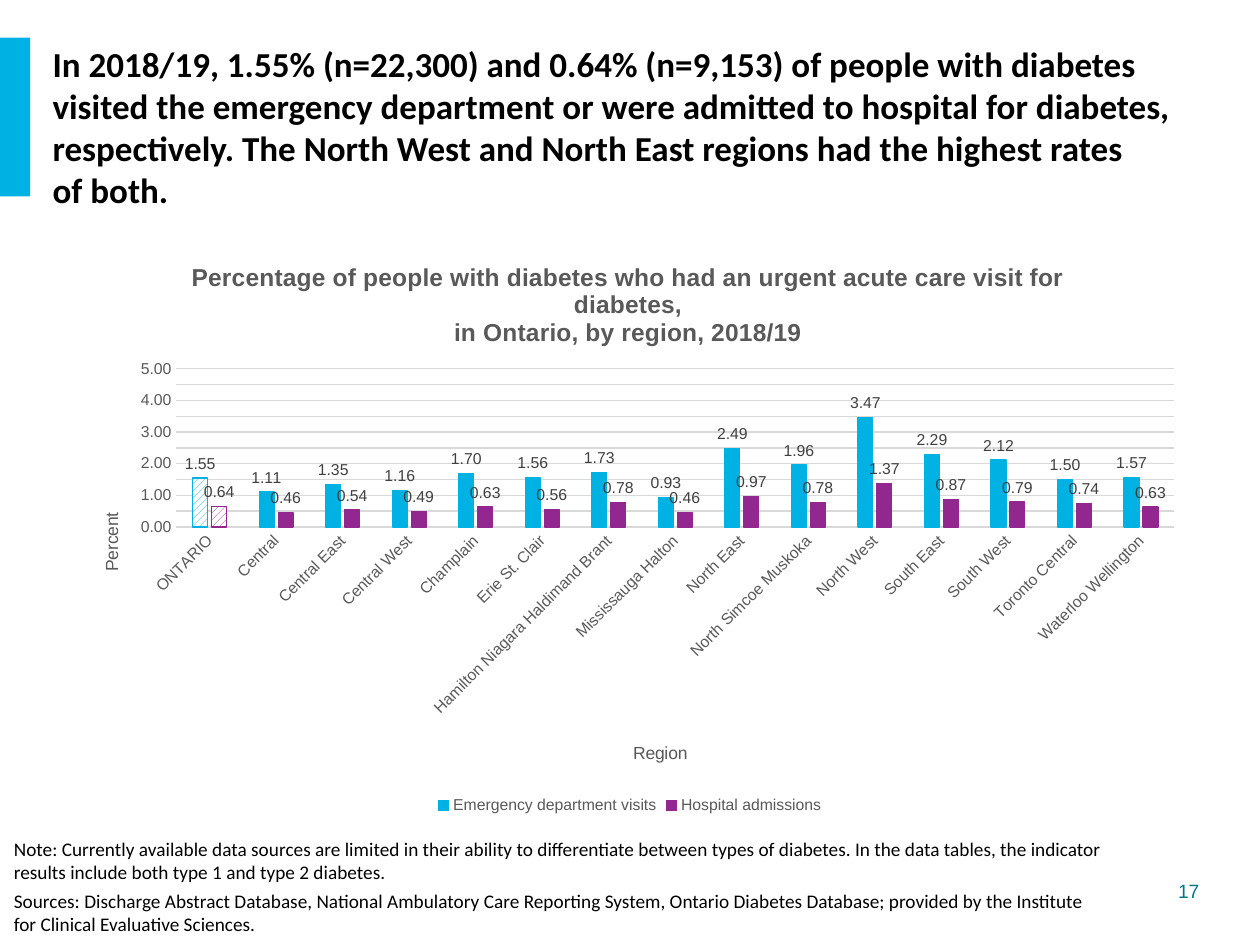
from copy import deepcopy

from lxml import etree
from pptx import Presentation
from pptx.chart.data import CategoryChartData
from pptx.dml.color import RGBColor
from pptx.enum import chart as ch, dml, shapes, text
from pptx.oxml.ns import qn
from pptx.util import Cm, Pt

BLUE = RGBColor(0x00, 0xB2, 0xE3)
PURPLE = RGBColor(0x92, 0x27, 0x8F)
TEAL = RGBColor(0x00, 0x78, 0x8A)
BLACK = RGBColor(0, 0, 0)
WHITE = RGBColor(0xFF, 0xFF, 0xFF)
DARK = RGBColor(0x40, 0x40, 0x40)
GREY = RGBColor(0x59, 0x59, 0x59)
PALE = RGBColor(0xD9, 0xD9, 0xD9)


def style(font, size, color, name="Arial", bold=False):
    font.size, font.name, font.bold = Pt(size), name, bold
    font.color.rgb = color


def place(part, index, **values):
    """Give a chart part a manual layout, in fractions of the chart."""
    for old in part.findall(qn("c:layout")):
        part.remove(old)
    layout = etree.Element(qn("c:layout"))
    manual = etree.SubElement(layout, qn("c:manualLayout"))
    values = {"xMode": "edge", "yMode": "edge", **values}
    if "w" in values:
        values = {"layoutTarget": "inner", **values}
    for tag, value in values.items():
        etree.SubElement(manual, qn("c:" + tag)).set("val", str(value))
    part.insert(index, layout)


prs = Presentation()
prs.slide_width, prs.slide_height = Cm(25.4), Cm(19.05)
slide = prs.slides.add_slide(prs.slide_layouts[6])

# Heading with its accent bar
bar = slide.shapes.add_shape(shapes.MSO_SHAPE.RECTANGLE, 0, Cm(0.76), Cm(0.61), Cm(3.2))
bar.shadow.inherit = False
bar.fill.solid()
bar.fill.fore_color.rgb = BLUE
bar.line.fill.background()

head = slide.shapes.add_shape(
    shapes.MSO_SHAPE.RECTANGLE, Cm(0.81), Cm(0.71), Cm(24.36), Cm(3.68))
head.shadow.inherit = False
head.fill.background()
head.line.color.rgb = WHITE
head.line.width = Pt(3)
head.line.dash_style = dml.MSO_LINE.ROUND_DOT
frame = head.text_frame
frame.word_wrap = True
frame.vertical_anchor = text.MSO_ANCHOR.MIDDLE
frame.text = (
    "In 2018/19, 1.55% (n=22,300) and 0.64% (n=9,153) of people with diabetes "
    "visited the emergency department or were admitted to hospital for diabetes, "
    "respectively. The North West and North East regions had the highest rates \v"
    "of both.")
para = frame.paragraphs[0]
para.alignment = text.PP_ALIGN.LEFT
style(para.font, 20, BLACK, "Calibri", True)

# Chart
data = CategoryChartData()
data.categories = [
    "ONTARIO", "Central", "Central East", "Central West", "Champlain",
    "Erie St. Clair", "Hamilton Niagara Haldimand Brant", "Mississauga Halton",
    "North East", "North Simcoe Muskoka", "North West", "South East",
    "South West", "Toronto Central", "Waterloo Wellington"]
data.add_series("Emergency department visits", [
    1.55, 1.11, 1.35, 1.16, 1.70, 1.56, 1.73, 0.93,
    2.49, 1.96, 3.47, 2.29, 2.12, 1.50, 1.57])
data.add_series("Hospital admissions", [
    0.64, 0.46, 0.54, 0.49, 0.63, 0.56, 0.78, 0.46,
    0.97, 0.78, 1.37, 0.87, 0.79, 0.74, 0.63])
chart = slide.shapes.add_chart(
    ch.XL_CHART_TYPE.COLUMN_CLUSTERED,
    Cm(1.27), Cm(4.72), Cm(22.86), Cm(11.81), data).chart
style(chart.font, 10, BLACK)

chart.has_title = True
title = chart.chart_title
title.text_frame.text = (
    "Percentage of people with diabetes who had an urgent acute care visit for diabetes,\n"
    "in Ontario, by region, 2018/19")
for para in title.text_frame.paragraphs:
    style(para.font, 14, GREY, bold=True)
place(title._element, 1, x=0.11, y=0.04)

chart.has_legend = True
chart.legend.position = ch.XL_LEGEND_POSITION.BOTTOM
chart.legend.include_in_layout = False
style(chart.legend.font, 9, GREY)

plot = chart.plots[0]
plot.gap_width, plot.overlap, plot.vary_by_categories = 219, -27, False
for series, color in zip(plot.series, (BLUE, PURPLE)):
    series.format.fill.solid()
    series.format.fill.fore_color.rgb = color
    total = series.points[0].format
    total.fill.patterned()
    total.fill.pattern = dml.MSO_PATTERN.WIDE_UPWARD_DIAGONAL
    total.fill.fore_color.rgb = color
    total.fill.back_color.rgb = WHITE
    for line in (series.format.line, total.line):
        line.color.rgb = color
        line.width = Pt(0.75)
    labels = series.data_labels
    labels.show_value = True
    labels.position = ch.XL_LABEL_POSITION.OUTSIDE_END
    labels.number_format, labels.number_format_is_linked = "####0.00", False
    style(labels.font, 9, DARK)

regions, rates = chart.category_axis, chart.value_axis
for axis, name, x, y in ((regions, "Region", 0.5, 0.86), (rates, "Percent", 0.03, 0.47)):
    axis.major_tick_mark = axis.minor_tick_mark = ch.XL_TICK_MARK.NONE
    style(axis.tick_labels.font, 9, GREY)
    axis.axis_title.text_frame.text = name
    style(axis.axis_title.text_frame.paragraphs[0].font, 10, GREY)
    place(axis.axis_title._element, 1, x=x, y=y)
regions.format.line.color.rgb = PALE
regions.format.line.width = Pt(0.75)
regions._element.find(qn("c:txPr")).find(qn("a:bodyPr")).set("rot", "-2700000")

rates.minimum_scale, rates.maximum_scale = 0, 5
rates.major_unit, rates.minor_unit = 1, 0.5
rates.has_major_gridlines = rates.has_minor_gridlines = True
grid = rates.major_gridlines.format.line
grid.color.rgb = PALE
grid.width = Pt(0.75)
major, minor = (rates._element.find(qn(tag)) for tag in ("c:majorGridlines", "c:minorGridlines"))
minor.append(deepcopy(major[0]))
rates.format.line.fill.background()
rates.tick_labels.number_format = "#,##0.00"
rates.tick_labels.number_format_is_linked = False
turned = next(rates.axis_title._element.iter(qn("a:bodyPr")))
turned.set("rot", "-5400000")
turned.set("vert", "horz")
place(chart._chartSpace.find(".//" + qn("c:plotArea")), 0, x=0.1, y=0.23, w=0.88, h=0.27)

# Notes and page number
notes = slide.shapes.add_textbox(Cm(0.03), Cm(16.76), Cm(22.61), Cm(2.29)).text_frame
notes.word_wrap = True
notes.text = (
    "Note: Currently available data sources are limited in their ability to "
    "differentiate between types of diabetes. In the data tables, the indicator "
    "results include both type 1 and type 2 diabetes.\n"
    "Sources: Discharge Abstract Database, National Ambulatory Care Reporting "
    "System, Ontario Diabetes Database; provided by the Institute for Clinical "
    "Evaluative Sciences.")
for para in notes.paragraphs:
    para.space_before = Pt(3.3)
    style(para.font, 11, BLACK, "Calibri")

page = slide.shapes.add_textbox(Cm(21.46), Cm(17.6), Cm(2.97), Cm(0.74)).text_frame
page.word_wrap = True
page.text = "17"
page.paragraphs[0].alignment = text.PP_ALIGN.RIGHT
style(page.paragraphs[0].font, 11, TEAL)

prs.save("out.pptx")
